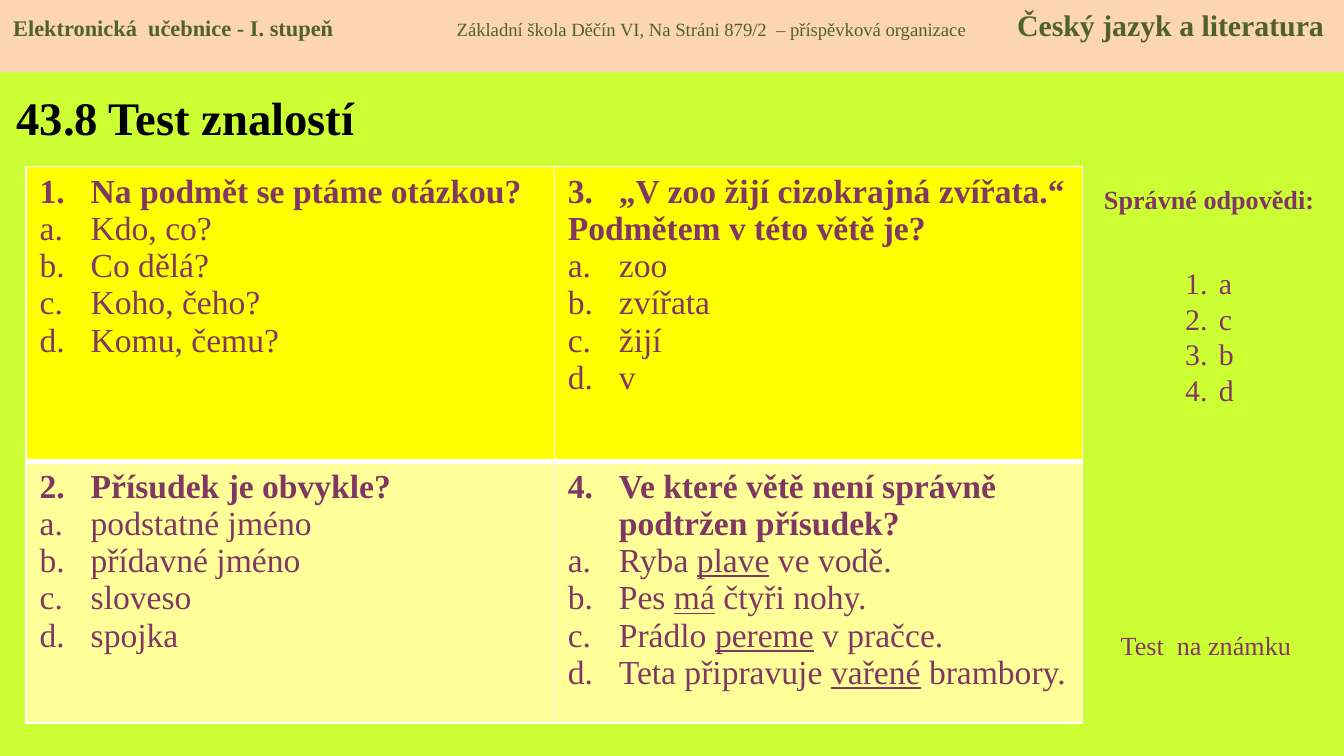
from dataclasses import dataclass
from typing import NamedTuple

from lxml.etree import SubElement
from pptx import Presentation
from pptx.dml.color import RGBColor
from pptx.enum.shapes import MSO_SHAPE as Shape
from pptx.enum.text import MSO_ANCHOR as Anchor, PP_ALIGN as Align
from pptx.oxml.ns import qn
from pptx.util import Inches, Pt

LIME = RGBColor(0xCC, 0xFF, 0x33)
PEACH = RGBColor(0xFC, 0xD5, 0xB5)
YELLOW = RGBColor(0xFF, 0xFF, 0x00)
CREAM = RGBColor(0xFF, 0xFF, 0x99)
PLUM = RGBColor(0x81, 0x37, 0x63)
OLIVE = RGBColor(0x4F, 0x62, 0x28)
BLACK = RGBColor(0, 0, 0)
FONT = "Times New Roman"
WIDTH = Inches(10)
HEIGHT = WIDTH * 9 // 16


class Box(NamedTuple):
    left: float
    top: float
    width: float
    height: float

    def emu(self) -> list[int]:
        sides = (WIDTH, HEIGHT, WIDTH, HEIGHT)
        return [int(side * share / 100) for side, share in zip(sides, self)]


@dataclass
class Label:
    text: str
    box: Box
    size: int
    color: RGBColor = PLUM
    bold: bool = False
    align: Align = Align.LEFT
    anchor: Anchor = Anchor.TOP


@dataclass
class Question:
    number: int
    text: str
    options: list[str]
    follow_up: str = ""


LABELS = [
    Label("43.8 Test znalostí", Box(0.24, 9.7, 31.9, 11.56), 25, BLACK, True,
          anchor=Anchor.MIDDLE),
    Label("Správné odpovědi:", Box(80.52, 23.4, 18.9, 6.04), 14, bold=True,
          align=Align.CENTER),
    Label("Test  na známku", Box(82.4, 82.38, 15.7, 6.04), 14),
]
BAND = [("Elektronická  učebnice - I. stupeň", 12, True),
        ("\tZákladní škola Děčín VI, Na Stráni 879/2  – příspěvková organizace", 10, False),
        ("\tČeský jazyk a literatura", 16, True)]
BAND_TABS = (3.3, 7.47)
ANSWERS = "acbd"
QUESTIONS = [
    [Question(1, "Na podmět se ptáme otázkou?",
              ["Kdo, co?", "Co dělá?", "Koho, čeho?", "Komu, čemu?"]),
     Question(3, "„V zoo žijí cizokrajná zvířata.“",
              ["zoo", "zvířata", "žijí", "v"], "Podmětem v této větě je?")],
    [Question(2, "Přísudek je obvykle?",
              ["podstatné jméno", "přídavné jméno", "sloveso", "spojka"]),
     Question(4, "Ve které větě není správně podtržen přísudek?",
              ["Ryba _plave_ ve vodě.", "Pes _má_ čtyři nohy.",
               "Prádlo _pereme_ v pračce.", "Teta připravuje _vařené_ brambory."])],
]
ROW_SHARES = (0.53, 0.47)
ROW_FILLS = (YELLOW, CREAM)
ROW_BORDERS = ({"lnL": 1, "lnR": 1, "lnT": 1, "lnB": 3},
               {"lnL": 1, "lnR": 1, "lnT": 3, "lnB": 1})


def add_run(p, text: str, size: int, color: RGBColor, **style) -> None:
    r = p.add_run()
    r.text = text
    r.font.color.rgb = color
    for name, value in {"name": FONT, "size": Pt(size), "bold": False, **style}.items():
        setattr(r.font, name, value)


def next_paragraph(tf):
    return tf.add_paragraph() if tf.paragraphs[0].runs else tf.paragraphs[0]


def number(p, scheme: str, indent: float, start: int = 1) -> None:
    pPr = p._p.get_or_add_pPr()
    pPr.set("marL", str(Inches(indent)))
    pPr.set("indent", str(-Inches(indent)))
    bullet = SubElement(pPr, qn("a:buAutoNum"), type=scheme)
    if start > 1:
        bullet.set("startAt", str(start))


def add_text_frame(s, box: Box):
    tf = s.shapes.add_textbox(*box.emu()).text_frame
    tf.word_wrap = True
    return tf


def draw_label(s, label: Label) -> None:
    tf = add_text_frame(s, label.box)
    tf.vertical_anchor = label.anchor
    p = tf.paragraphs[0]
    p.alignment = label.align
    add_run(p, label.text, label.size, label.color, bold=label.bold)


def draw_band(s) -> None:
    sp = s.shapes.add_shape(Shape.RECTANGLE, *Box(0, 0, 100, 9.6).emu())
    sp.shadow.inherit = False
    sp.fill.solid()
    sp.fill.fore_color.rgb = PEACH
    sp.line.fill.background()
    tf = sp.text_frame
    tf.vertical_anchor = Anchor.TOP
    p = tf.paragraphs[0]
    p.alignment = Align.LEFT
    tabs = SubElement(p._p.get_or_add_pPr(), qn("a:tabLst"))
    for stop in BAND_TABS:
        SubElement(tabs, qn("a:tab"), pos=str(Inches(stop)), algn="l")
    for text, size, bold in BAND:
        add_run(p, text, size, OLIVE, bold=bold)


def draw_answers(s) -> None:
    tf = add_text_frame(s, Box(87.2, 29.25, 5.5, 35.38))
    tf.margin_top = Inches(0.33)
    for answer in ANSWERS:
        p = next_paragraph(tf)
        p.line_spacing = Pt(19)
        number(p, "arabicPeriod", 0.25)
        add_run(p, answer, 16, PLUM)


def write_question(tf, question: Question) -> None:
    p = next_paragraph(tf)
    number(p, "arabicPeriod", 0.38, question.number)
    add_run(p, question.text, 18, PLUM, bold=True)
    if question.follow_up:
        add_run(next_paragraph(tf), question.follow_up, 18, PLUM, bold=True)
    for option in question.options:
        p = next_paragraph(tf)
        number(p, "alphaLcPeriod", 0.38)
        for i, part in enumerate(option.split("_")):
            add_run(p, part, 18, PLUM, underline=i % 2 == 1)


def style_cell(cell, fill: RGBColor, borders: dict[str, int]) -> None:
    tcPr = cell._tc.get_or_add_tcPr()
    for side, width in borders.items():
        line = SubElement(tcPr, qn(f"a:{side}"), w=str(Pt(width)))
        SubElement(SubElement(line, qn("a:solidFill")), qn("a:srgbClr"), val="FFFFFF")
    cell.fill.solid()
    cell.fill.fore_color.rgb = fill


def draw_questions(s) -> None:
    box = Box(1.95, 22.04, 78.6, 73.6).emu()
    table = s.shapes.add_table(len(QUESTIONS), len(QUESTIONS[0]), *box).table
    for i, row in enumerate(QUESTIONS):
        table.rows[i].height = int(box[3] * ROW_SHARES[i])
        for j, question in enumerate(row):
            cell = table.cell(i, j)
            style_cell(cell, ROW_FILLS[i], ROW_BORDERS[i])
            write_question(cell.text_frame, question)


def main() -> None:
    prs = Presentation()
    prs.slide_width, prs.slide_height = WIDTH, HEIGHT
    s = prs.slides.add_slide(prs.slide_layouts[6])
    s.background.fill.solid()
    s.background.fill.fore_color.rgb = LIME
    for label in LABELS:
        draw_label(s, label)
    draw_questions(s)
    draw_answers(s)
    draw_band(s)
    prs.save("out.pptx")


if __name__ == "__main__":
    main()
